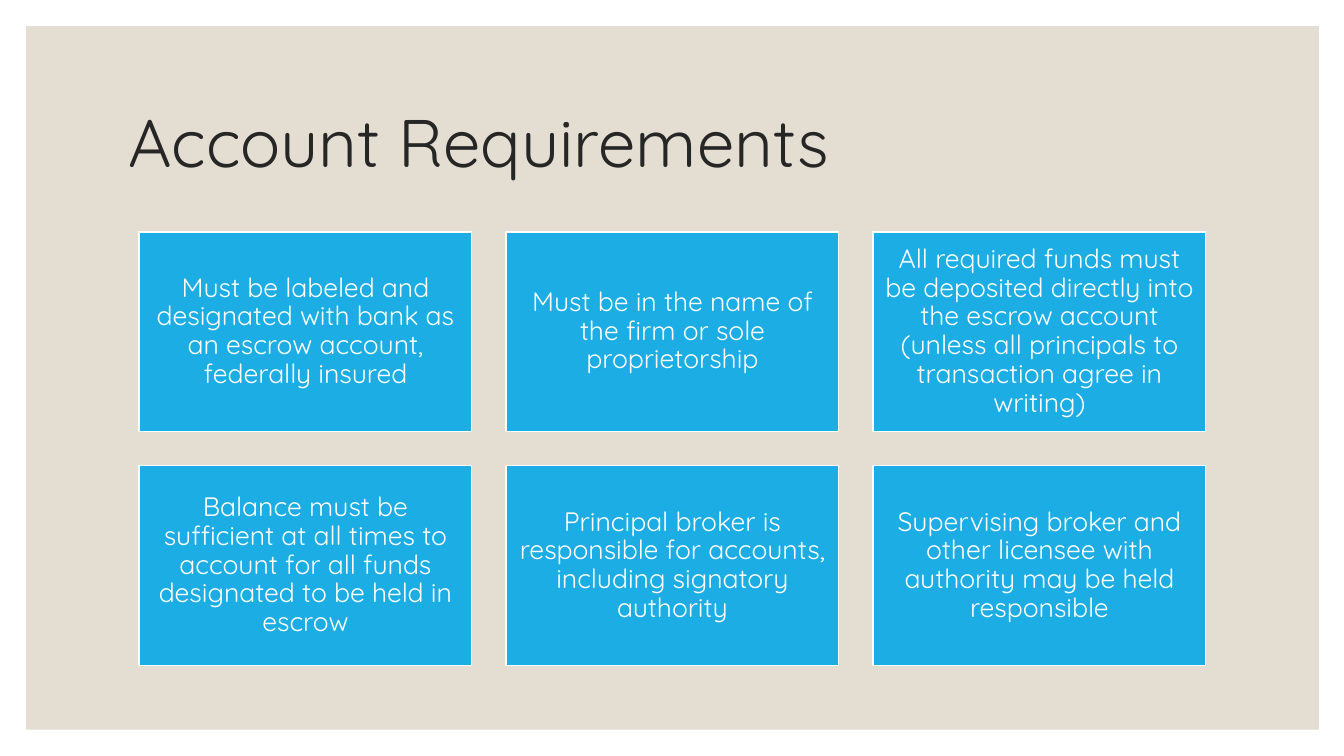
import pptx
import pptx.util
import pptx.dml.color
import pptx.enum.shapes
import pptx.enum.text

Inches = pptx.util.Inches
ALIGN = pptx.enum.text.PP_ALIGN

COLORS = {
    "page": "FFFFFF",
    "panel": "E3DED1",
    "card": "1CADE4",
    "title": "262626",
    "text": "FFFFFF",
}
FONT = "Quicksand"

CARDS = [
    "Must be labeled and designated with bank as an escrow account, federally insured",
    "Must be in the name of the firm or sole proprietorship",
    "All required funds must be deposited directly into the escrow account "
    "(unless all principals to transaction agree in writing)",
    "Balance must be sufficient at all times to account for all funds "
    "designated to be held in escrow",
    "Principal broker is responsible for accounts, including signatory authority",
    "Supervising broker and other licensee with authority may be held responsible",
]

# Card grid, in inches
COLS = 3
LEFT, TOP = 1.38, 2.3
WIDTH, HEIGHT = 3.3, 1.98
GAP = 0.34


def color(name):
    return pptx.dml.color.RGBColor.from_string(COLORS[name])


def apply(target, values):
    for key, value in values.items():
        setattr(target, key, value)


def write(shape, text, size, ink, align, inset):
    frame = shape.text_frame
    frame.text = text
    pad = Inches(inset)
    apply(frame, {
        "word_wrap": True,
        "auto_size": pptx.enum.text.MSO_AUTO_SIZE.NONE,
        "vertical_anchor": pptx.enum.text.MSO_ANCHOR.MIDDLE,
        "margin_left": pad,
        "margin_right": pad,
        "margin_top": pad,
        "margin_bottom": pad,
    })
    para = frame.paragraphs[0]
    apply(para, {"alignment": align, "line_spacing": 0.9})
    font = para.runs[0].font
    apply(font, {"name": FONT, "size": pptx.util.Pt(size)})
    font.color.rgb = color(ink)


def add_rect(slide, left, top, width, height, fill):
    rect = slide.shapes.add_shape(
        pptx.enum.shapes.MSO_SHAPE.RECTANGLE,
        Inches(left), Inches(top), Inches(width), Inches(height))
    rect.shadow.inherit = False
    rect.fill.solid()
    rect.fill.fore_color.rgb = color(fill)
    rect.line.fill.background()
    return rect


def add_panel(slide):
    panel = add_rect(slide, 0.26, 0.26, 12.82, 6.98, "panel")
    # Send the panel behind the title
    slide.shapes.title._element.addprevious(panel._element)


def set_title(slide, text):
    title = slide.shapes.title
    apply(title, {"left": Inches(1.17), "top": Inches(0.7),
                  "width": Inches(11), "height": Inches(1.5)})
    write(title, text, 48, "title", ALIGN.LEFT, 0.1)


def add_card(slide, index, text):
    row, col = divmod(index, COLS)
    card = add_rect(slide, LEFT + col * (WIDTH + GAP),
                    TOP + row * (HEIGHT + GAP), WIDTH, HEIGHT, "card")
    card.line.color.rgb = color("page")
    card.line.width = pptx.util.Pt(1)
    write(card, text, 19, "text", ALIGN.CENTER, 0.08)


def main():
    deck = pptx.Presentation()
    apply(deck, {"slide_width": Inches(13.33), "slide_height": Inches(7.5)})
    slide = deck.slides.add_slide(deck.slide_layouts.get_by_name("Title Only"))

    # Background and heading
    slide.background.fill.solid()
    slide.background.fill.fore_color.rgb = color("page")
    add_panel(slide)
    set_title(slide, "Account Requirements")

    # Requirement cards
    for index, text in enumerate(CARDS):
        add_card(slide, index, text)

    deck.save("out.pptx")


if __name__ == "__main__":
    main()
